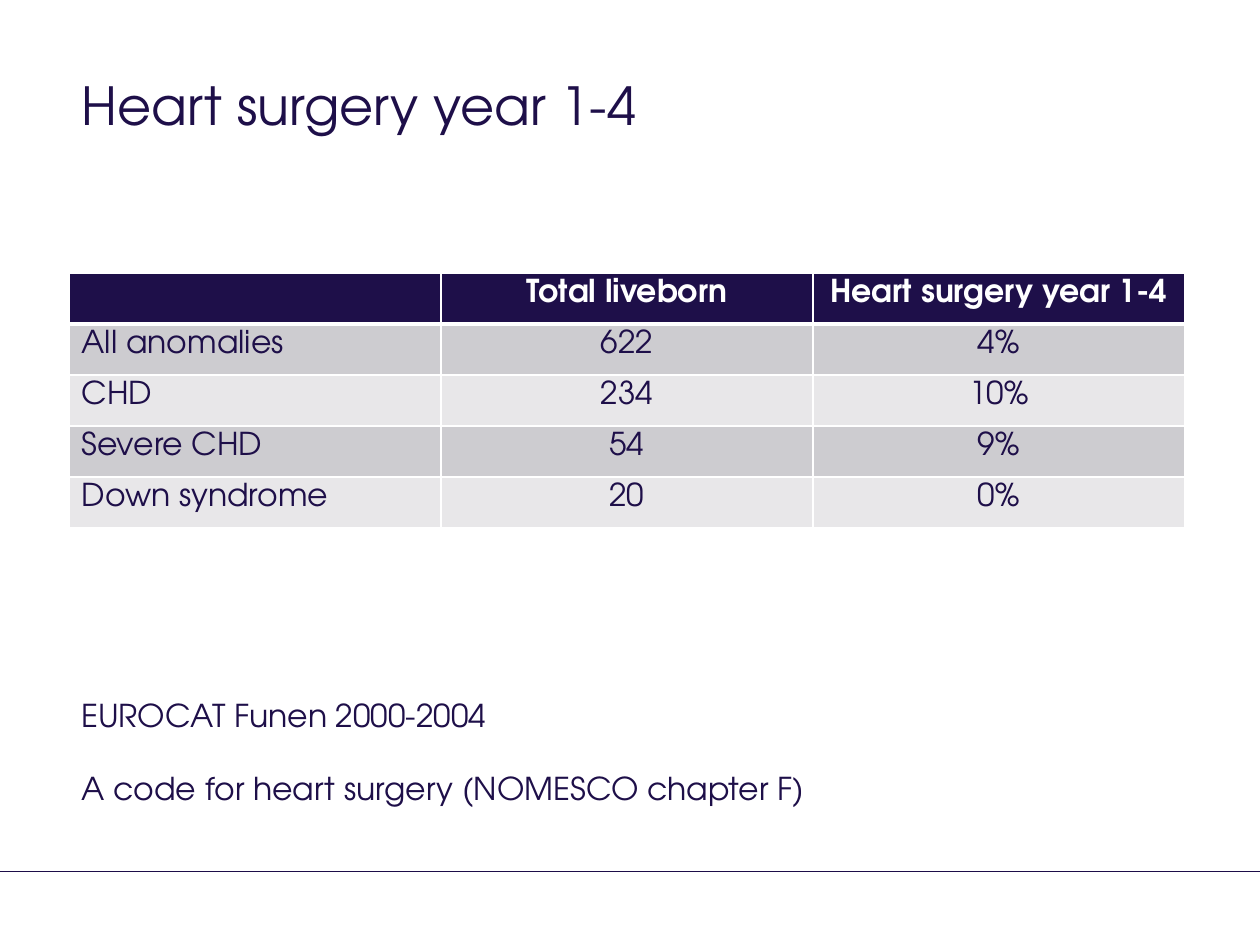
from dataclasses import dataclass

from lxml.etree import SubElement
from pptx import Presentation
from pptx.dml.color import RGBColor as Color
from pptx.enum.shapes import MSO_CONNECTOR as Connector
from pptx.enum.text import MSO_ANCHOR as Anchor, PP_ALIGN as Align
from pptx.oxml.ns import qn
from pptx.util import Emu, Pt


@dataclass(frozen=True)
class Theme:
    font: str = "TeX Gyre Adventor"
    ink: str = "1E0F49"
    rule: str = "1D0D49"
    paper: str = "FFFFFF"
    bands: tuple = ("CDCCD0", "E8E7E9")
    title_size: int = 30
    text_size: int = 18


THEME = Theme()
PX = 914400 // 126
TITLE = "Heart surgery year 1-4"
ROWS = [
    ("", "Total liveborn", "Heart surgery year 1-4"),
    ("All anomalies", "622", "4%"),
    ("CHD", "234", "10%"),
    ("Severe CHD", "54", "9%"),
    ("Down syndrome", "20", "0%"),
]
NOTES = ["EUROCAT Funen 2000-2004", "A code for heart surgery (NOMESCO chapter F)"]
SLIDE_SIZE = (1260, 945)
TITLE_BOX = (69, 67, 1041, 154)
TABLE_BOX = (69, 273, 1116, 255)
NOTES_BOX = (69, 690, 1043, 154)
RULE_Y = 871


def px(*lengths):
    return [Emu(length * PX) for length in lengths]


def write(frame, lines, size=THEME.text_size, color=THEME.ink, bold=False,
          align=Align.LEFT, gap=0):
    frame.word_wrap = True
    for index, line in enumerate(lines):
        para = frame.add_paragraph() if index else frame.paragraphs[0]
        para.alignment = align
        para.space_before = Pt(gap if index else 0)
        para.font.size = Pt(size)
        span = para.add_run()
        span.text = line
        span.font.name = THEME.font
        span.font.size = Pt(size)
        span.font.bold = bold
        span.font.color.rgb = Color.from_string(color)


def border_cell(cell, widths):
    props = cell._tc.get_or_add_tcPr()
    for index, (side, width) in enumerate(widths.items()):
        line = props.makeelement(qn(f"a:ln{side}"), {"w": str(Pt(width))})
        fill = SubElement(line, qn("a:solidFill"))
        SubElement(fill, qn("a:srgbClr"), val=THEME.paper)
        props.insert(index, line)


def add_rule(page):
    rule = page.shapes.add_connector(Connector.STRAIGHT, *px(0, RULE_Y, SLIDE_SIZE[0], RULE_Y))
    rule.line.color.rgb = Color.from_string(THEME.rule)
    rule.line.width = Pt(0.25)
    SubElement(rule._element.spPr, qn("a:effectLst"))


def add_title(page):
    title = page.shapes.title
    title.left, title.top, title.width, title.height = px(*TITLE_BOX)
    title.text_frame.vertical_anchor = Anchor.TOP
    write(title.text_frame, [TITLE], size=THEME.title_size)


def add_surgery_table(page):
    table = page.shapes.add_table(len(ROWS), len(ROWS[0]), *px(*TABLE_BOX)).table
    for row, values in enumerate(ROWS):
        header = row == 0
        for column, value in enumerate(values):
            cell = table.cell(row, column)
            cell.fill.solid()
            fill = THEME.ink if header else THEME.bands[(row - 1) % 2]
            cell.fill.fore_color.rgb = Color.from_string(fill)
            border_cell(cell, {"L": 1, "R": 1, "T": 3 if row == 1 else 1, "B": 3 if header else 1})
            write(cell.text_frame, [value] if value else [], bold=header,
                  color=THEME.paper if header else THEME.ink,
                  align=Align.CENTER if column else Align.LEFT)


def add_notes(page):
    box = page.shapes.add_textbox(*px(*NOTES_BOX))
    write(box.text_frame, NOTES, gap=20)


def main():
    deck = Presentation()
    deck.slide_width, deck.slide_height = px(*SLIDE_SIZE)
    page = deck.slides.add_slide(deck.slide_layouts[5])
    add_rule(page)
    add_title(page)
    add_surgery_table(page)
    add_notes(page)
    deck.save("out.pptx")


if __name__ == "__main__":
    main()
